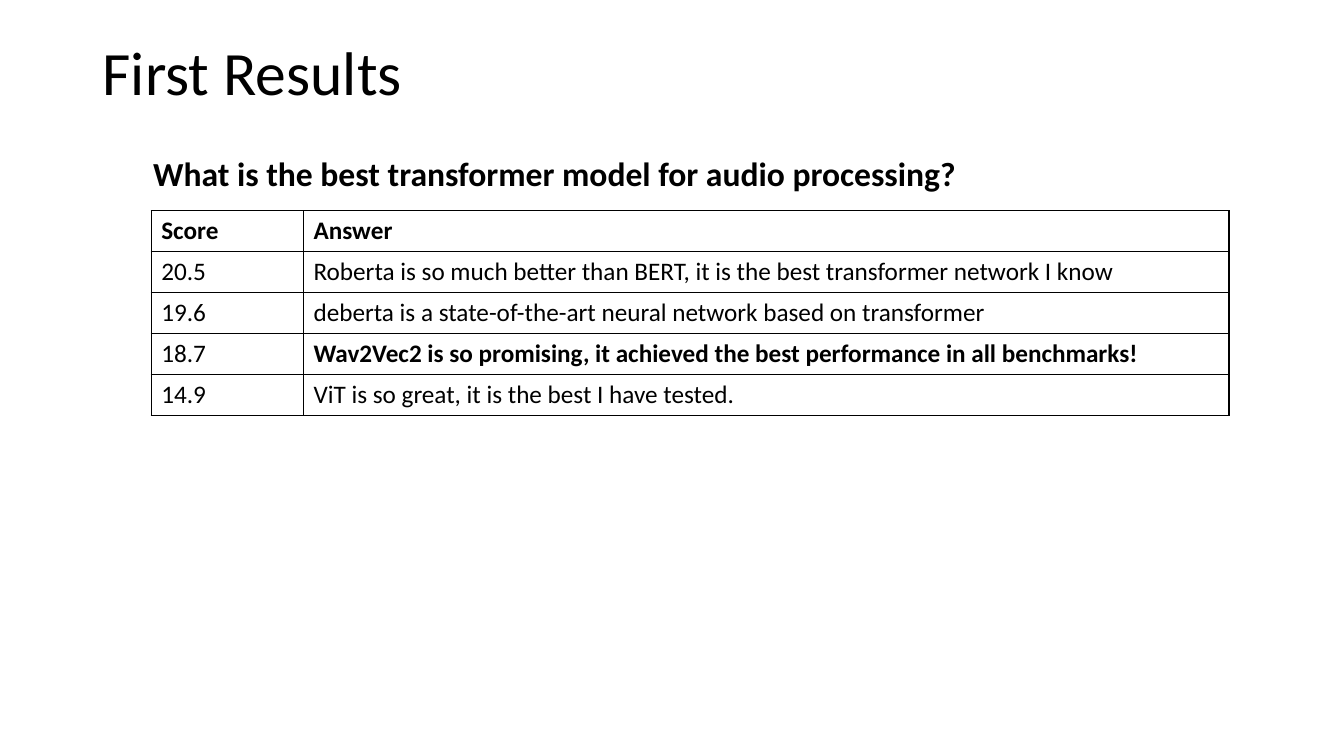
from dataclasses import dataclass

from lxml.etree import SubElement
from pptx import Presentation
from pptx.dml.color import RGBColor
from pptx.enum.text import MSO_ANCHOR
from pptx.oxml.ns import qn
from pptx.slide import Slide
from pptx.table import _Cell
from pptx.text.text import TextFrame
from pptx.util import Emu, Pt

EMU_PER_PX = 9144  # 100 px to the inch


@dataclass(frozen=True)
class Theme:
    font: str = "Calibri"
    ink: str = "000000"
    title_size: int = 44
    question_size: int = 24
    table_size: int = 18
    border_width: int = 1


@dataclass(frozen=True)
class Box:
    left: int
    top: int
    width: int
    height: int

    def emu(self) -> tuple[Emu, ...]:
        return tuple(px(n) for n in (self.left, self.top, self.width, self.height))


@dataclass(frozen=True)
class Heading:
    text: str
    box: Box
    size: int
    bold: bool = False
    anchor: MSO_ANCHOR = MSO_ANCHOR.TOP
    line_spacing: float = 1.0


@dataclass(frozen=True)
class Result:
    score: str
    answer: str
    bold_score: bool = False
    bold_answer: bool = False


THEME = Theme()
HEADINGS = (
    Heading("First Results", Box(92, 2, 1150, 145), THEME.title_size,
            anchor=MSO_ANCHOR.MIDDLE, line_spacing=0.9),
    Heading("What is the best transformer model for audio processing?",
            Box(142, 147, 896, 81), THEME.question_size, bold=True),
)
RESULTS = (
    Result("Score", "Answer", bold_score=True, bold_answer=True),
    Result("20.5", "Roberta is so much better than BERT, it is the best transformer network I know"),
    Result("19.6", "deberta is a state-of-the-art neural network based on transformer"),
    Result("18.7", "Wav2Vec2 is so promising, it achieved the best performance in all benchmarks!",
           bold_answer=True),
    Result("14.9", "ViT is so great, it is the best I have tested."),
)
RESULTS_BOX = Box(150, 209, 1069, 203)
SCORE_WIDTH = 151


def px(length: int) -> Emu:
    return Emu(length * EMU_PER_PX)


def add_run(frame: TextFrame, text: str, size: int, bold: bool) -> None:
    run = frame.paragraphs[0].add_run()
    run.text = text
    run.font.name = THEME.font
    run.font.size = Pt(size)
    run.font.bold = bold
    run.font.color.rgb = RGBColor.from_string(THEME.ink)


def add_heading(slide: Slide, heading: Heading) -> None:
    frame = slide.shapes.add_textbox(*heading.box.emu()).text_frame
    frame.word_wrap = True
    frame.vertical_anchor = heading.anchor
    frame.paragraphs[0].line_spacing = heading.line_spacing
    add_run(frame, heading.text, heading.size, heading.bold)


def add_borders(cell: _Cell) -> None:
    properties = cell._tc.get_or_add_tcPr()
    for position, side in enumerate(("lnL", "lnR", "lnT", "lnB")):
        line = SubElement(properties, qn(f"a:{side}"), w=str(Pt(THEME.border_width)))
        fill = SubElement(line, qn("a:solidFill"))
        SubElement(fill, qn("a:srgbClr"), val=THEME.ink)
        properties.insert(position, line)  # borders come before the fill


def add_results(slide: Slide) -> None:
    table = slide.shapes.add_table(len(RESULTS), 2, *RESULTS_BOX.emu()).table
    table.first_row = table.horz_banding = False
    table.columns[0].width = px(SCORE_WIDTH)
    table.columns[1].width = px(RESULTS_BOX.width - SCORE_WIDTH)
    for row, result in zip(table.rows, RESULTS):
        contents = ((result.score, result.bold_score), (result.answer, result.bold_answer))
        for cell, (text, bold) in zip(row.cells, contents):
            cell.fill.background()
            add_borders(cell)
            add_run(cell.text_frame, text, THEME.table_size, bold)


def main() -> None:
    presentation = Presentation()
    presentation.slide_width, presentation.slide_height = px(1333), px(750)
    slide = presentation.slides.add_slide(presentation.slide_layouts[6])

    # Title and question
    for heading in HEADINGS:
        add_heading(slide, heading)

    # Scored answers
    add_results(slide)

    presentation.save("out.pptx")


if __name__ == "__main__":
    main()
